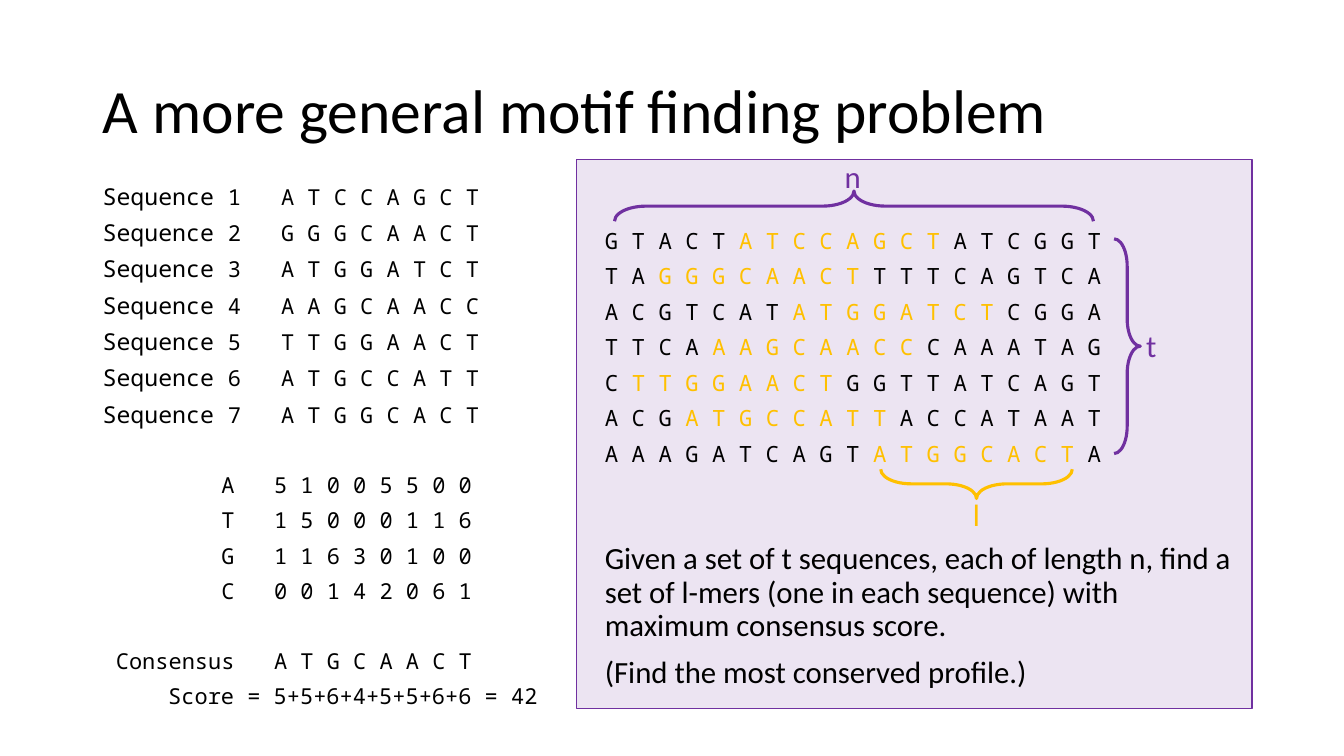
from pptx import Presentation
from pptx.dml.color import RGBColor
from pptx.enum.shapes import MSO_SHAPE as Shape
from pptx.enum.text import MSO_ANCHOR as Anchor, MSO_AUTO_SIZE as AutoSize, PP_ALIGN as Align
from pptx.oxml.ns import qn
from pptx.util import Inches, Pt
from lxml import etree

BLACK = RGBColor(0x00, 0x00, 0x00)
PURPLE = RGBColor(0x70, 0x30, 0xA0)
GOLD = RGBColor(0xFF, 0xC0, 0x00)
SANS, MONO = "Calibri", "Noto Sans Mono"

# Content
TITLE = "A more general motif finding problem"
MOTIF_LENGTH = 8
SEQUENCES = [  # DNA, start of its motif
    ("GTACTATCCAGCTATCGGT", 5),
    ("TAGGGCAACTTTTCAGTCA", 2),
    ("ACGTCATATGGATCTCGGA", 7),
    ("TTCAAAGCAACCCAAATAG", 4),
    ("CTTGGAACTGGTTATCAGT", 1),
    ("ACGATGCCATTACCATAAT", 3),
    ("AAAGATCAGTATGGCACTA", 10),
]
PROFILE = [("A", "51005500"), ("T", "15000116"), ("G", "11630100"), ("C", "00142061")]
CONSENSUS = ("Consensus", "ATGCAACT")
SCORE = "Score = 5+5+6+4+5+5+6+6 = 42"
PROBLEM = [
    "Given a set of t sequences, each of length n, find a set of l-mers "
    "(one in each sequence) with maximum consensus score.",
    "(Find the most conserved profile.)",
]
BRACES = [  # left, top, width, height, rotation, colour
    (8.32, -0.33, 0.3, 4.75, 270, PURPLE),
    (11.05, 2.37, 0.26, 2.13, 0, PURPLE),
    (9.54, 3.85, 0.29, 1.9, 90, GOLD),
]
BRACE_LABELS = [("n", 8.28, 1.52, PURPLE), ("t", 11.27, 3.19, PURPLE), ("l", 9.55, 4.87, GOLD)]

# Tab stops in inches, paragraph gaps in points
SEQUENCE_TABS = [(1.77, "l")]
PROFILE_TABS = [(1.31, "r"), (1.7, "l")]
SCORE_TABS = [(0.65, "l")]
ROW_GAP, BLOCK_GAP = 10, 35.2


def box(left, top, width, height):
    return [Inches(value) for value in (left, top, width, height)]


def place(shape, *bounds):
    shape.left, shape.top, shape.width, shape.height = box(*bounds)
    shape.text_frame.word_wrap = True
    shape.text_frame.auto_size = AutoSize.NONE


def add_text_box(*bounds):
    frame = slide.shapes.add_textbox(*box(*bounds)).text_frame
    frame.word_wrap = True
    return frame


def spaced(letters):
    return " ".join(letters)


def write(frame, text, size=22, font=SANS, color=BLACK, line=None, before=0, tabs=(),
          unbullet=False):
    """Add a paragraph; text is a string or a list of (string, format) runs."""
    paragraph = frame.paragraphs[0]
    if paragraph.runs:
        paragraph = frame.add_paragraph()
    paragraph.alignment = Align.LEFT
    paragraph.space_before = Pt(before)
    if line:
        paragraph.line_spacing = line
    properties = paragraph._p.get_or_add_pPr()
    if unbullet:
        properties.set("marL", "0")
        properties.set("indent", "0")
        etree.SubElement(properties, qn("a:buNone"))
    if tabs:
        tab_list = etree.SubElement(properties, qn("a:tabLst"))
        for position, side in tabs:
            etree.SubElement(tab_list, qn("a:tab"), pos=str(Inches(position)), algn=side)
    for words, style in [(text, {})] if isinstance(text, str) else text:
        run = paragraph.add_run()
        run.text = words
        run.font.name = font
        run.font.size = Pt(style.get("size", size))
        run.font.color.rgb = style.get("color", color)


presentation = Presentation()
presentation.slide_width, presentation.slide_height = Inches(13.33), Inches(7.5)
slide = presentation.slides.add_slide(presentation.slide_layouts[1])
title, motifs = slide.placeholders

# Panel behind the text
panel = slide.shapes.add_shape(Shape.RECTANGLE, *box(5.72, 1.58, 6.7, 5.45))
panel.shadow.inherit = False
panel.fill.solid()
panel.fill.fore_color.rgb = PURPLE
panel_color = panel._element.spPr.find(qn("a:solidFill"))[0]
etree.SubElement(panel_color, qn("a:alpha"), val="13000")
panel.line.color.rgb = PURPLE
panel.line.width = Pt(1)
slide.shapes._spTree.insert(2, panel._element)

# Title
place(title, 0.92, 0.4, 11.5, 1.45)
title.text_frame.vertical_anchor = Anchor.MIDDLE
write(title.text_frame, TITLE, size=44, line=0.9)

# Full sequences with the motif highlighted
place(motifs, 5.9, 2.25, 6.52, 2.6)
for dna, start in SEQUENCES:
    end = start + MOTIF_LENGTH
    write(motifs.text_frame,
          [(spaced(dna[:start]) + " ", {}),
           (spaced(dna[start:end]) + " ", {"color": GOLD}),
           (spaced(dna[end:]), {})],
          size=16, font=MONO, line=0.8, before=ROW_GAP, unbullet=True)

# Braces and their labels
for *bounds, rotation, color in BRACES:
    brace = slide.shapes.add_shape(Shape.RIGHT_BRACE, *box(*bounds))
    brace.rotation = rotation
    brace.adjustments[0] = 1.043
    brace.shadow.inherit = False
    brace.fill.background()
    brace.line.color.rgb = color
    brace.line.width = Pt(2.25)
for label, left, top, color in BRACE_LABELS:
    write(add_text_box(left, top, 0.46, 0.47), label, color=color)

# Problem statement
statement = add_text_box(5.9, 5.34, 6.52, 1.7)
for sentence in PROBLEM:
    write(statement, sentence, line=0.9, before=10)

# Motifs, their profile and the consensus
profile = add_text_box(0.92, 1.81, 5.1, 5.41)
row_format = dict(size=15.7, font=MONO, line=0.8)
for number, (dna, start) in enumerate(SEQUENCES, 1):
    motif = spaced(dna[start:start + MOTIF_LENGTH])
    write(profile, [("Sequence ", {"size": 16.6}), (f"{number}\t{motif}", {})],
          before=ROW_GAP, tabs=SEQUENCE_TABS, **row_format)
for label, letters in PROFILE + [CONSENSUS]:
    starts_block = label in (PROFILE[0][0], CONSENSUS[0])
    write(profile, f"\t{label}\t{spaced(letters)}",
          before=BLOCK_GAP if starts_block else ROW_GAP, tabs=PROFILE_TABS, **row_format)
write(profile, f"\t{SCORE}", before=ROW_GAP, tabs=SCORE_TABS, **row_format)

presentation.save("out.pptx")
